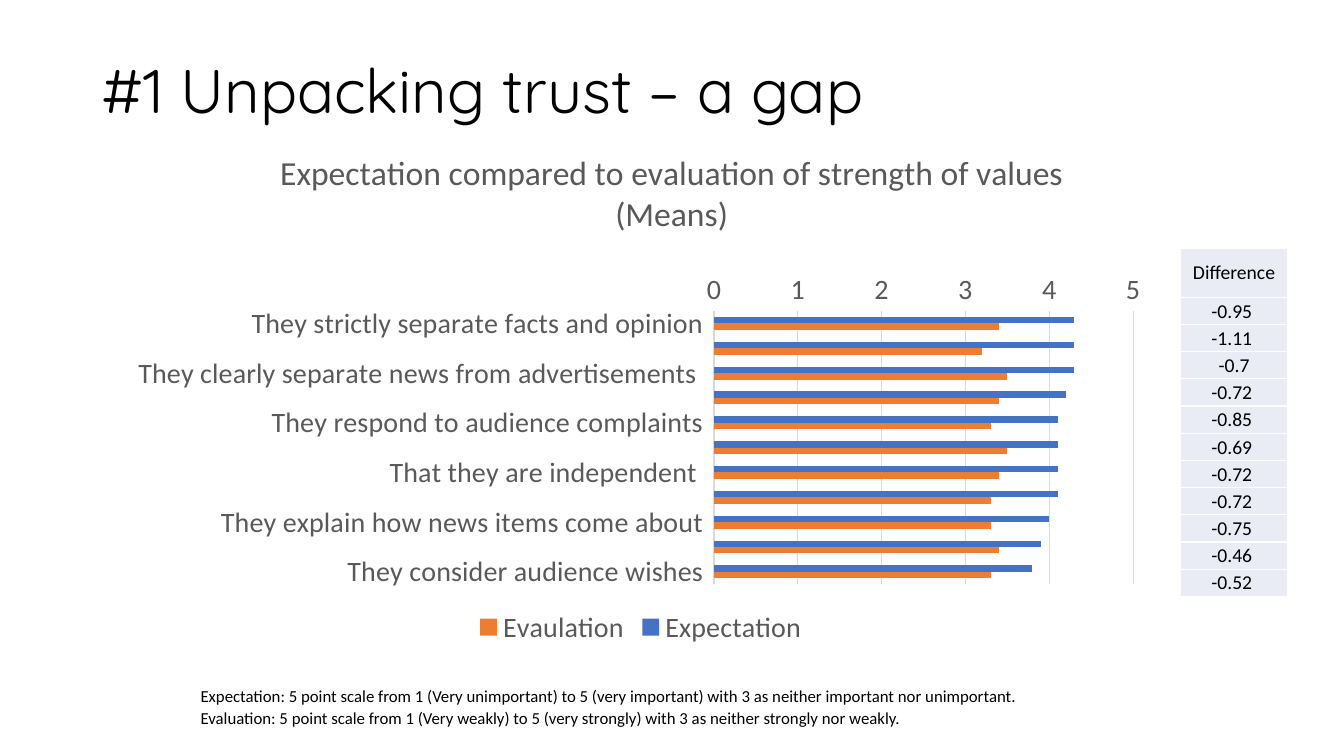
"""Build a slide comparing expected and perceived values behind trust in news."""
from dataclasses import dataclass

from lxml.etree import SubElement
from pptx import Presentation
from pptx.chart.chart import Chart
from pptx.chart.data import CategoryChartData
from pptx.dml.color import RGBColor
from pptx.enum.chart import XL_CHART_TYPE as ChartType
from pptx.enum.chart import XL_LEGEND_POSITION as LegendPosition
from pptx.enum.chart import XL_TICK_MARK as TickMark
from pptx.enum.text import MSO_ANCHOR as Anchor
from pptx.enum.text import MSO_AUTO_SIZE as AutoSize
from pptx.enum.text import PP_ALIGN as Align
from pptx.oxml.ns import qn
from pptx.slide import Slide
from pptx.table import _Cell as Cell
from pptx.util import Inches, Pt

BLACK = RGBColor(0x00, 0x00, 0x00)
WHITE = RGBColor(0xFF, 0xFF, 0xFF)
GREY = RGBColor(0x59, 0x59, 0x59)
PALE_GREY = RGBColor(0xD9, 0xD9, 0xD9)
PALE_BLUE = RGBColor(0xE9, 0xEB, 0xF5)
BLUE = RGBColor(0x44, 0x72, 0xC4)
ORANGE = RGBColor(0xED, 0x7D, 0x31)
BODY_FONT = "Calibri"


@dataclass(frozen=True)
class Value:
    statement: str
    expectation: float
    evaluation: float
    difference: str


VALUES = [
    Value("They strictly separate facts and opinion ", 4.3, 3.4, "-0.95 "),
    Value("", 4.3, 3.2, "-1.11 "),
    Value("They clearly separate news from advertisements  ", 4.3, 3.5, "-0.7"),
    Value("", 4.2, 3.4, "-0.72 "),
    Value("They respond to audience complaints ", 4.1, 3.3, "-0.85 "),
    Value("", 4.1, 3.5, "-0.69 "),
    Value("That they are independent  ", 4.1, 3.4, "-0.72 "),
    Value("", 4.1, 3.3, "-0.72 "),
    Value("They explain how news items come about ", 4, 3.3, "-0.75 "),
    Value("", 3.9, 3.4, "-0.46 "),
    Value("They consider audience wishes ", 3.8, 3.3, "-0.52 "),
]
SCALE_NOTES = [
    "Expectation: 5 point scale from 1 (Very unimportant) to 5 (very important) "
    "with 3 as neither important nor unimportant.",
    "Evaluation: 5 point scale from 1 (Very weakly) to 5 (very strongly) "
    "with 3 as neither strongly nor weakly.",
]


def style_font(font, size: float, color: RGBColor, name: str = BODY_FONT) -> None:
    font.name, font.size, font.bold = name, Pt(size), False
    font.color.rgb = color


def set_layout(parent, **fractions: float) -> None:
    layout = parent.find(qn("c:layout"))
    if layout is None:
        layout = SubElement(parent, qn("c:layout"))
        parent.insert(0, layout)
    for child in list(layout):
        layout.remove(child)
    manual = SubElement(layout, qn("c:manualLayout"))
    if "w" in fractions:
        SubElement(manual, qn("c:layoutTarget"), val="inner")
    for side in ("xMode", "yMode"):
        SubElement(manual, qn(f"c:{side}"), val="edge")
    for side, fraction in fractions.items():
        SubElement(manual, qn(f"c:{side}"), val=str(fraction))


def add_heading(slide: Slide) -> None:
    heading = slide.shapes.title
    heading.left, heading.top = Inches(0.92), Inches(0.2)
    heading.width, heading.height = Inches(11.5), Inches(1.45)
    frame = heading.text_frame
    frame.text = "#1 Unpacking trust – a gap"
    frame.auto_size = AutoSize.NONE
    frame.vertical_anchor = Anchor.MIDDLE
    paragraph = frame.paragraphs[0]
    paragraph.alignment, paragraph.line_spacing = Align.LEFT, 0.9
    style_font(paragraph.font, 44, BLACK, "Quicksand")


def style_axes(chart: Chart) -> None:
    for axis in (chart.category_axis, chart.value_axis):
        axis.major_tick_mark = axis.minor_tick_mark = TickMark.NONE
        style_font(axis.tick_labels.font, 20, GREY)
    statements, scale = chart.category_axis, chart.value_axis
    statements.reverse_order = True
    scale.minimum_scale, scale.maximum_scale, scale.major_unit = 0, 5, 1
    scale.tick_labels.number_format = "0"
    scale.tick_labels.number_format_is_linked = False
    scale.format.line.fill.background()
    for line in (statements.format.line, scale.major_gridlines.format.line):
        line.color.rgb, line.width = PALE_GREY, Pt(0.75)


def add_means_chart(slide: Slide) -> None:
    means = CategoryChartData()
    means.categories = [value.statement for value in VALUES]
    means.add_series("Expectation", [value.expectation for value in VALUES])
    means.add_series("Evaulation", [value.evaluation for value in VALUES])
    chart = slide.shapes.add_chart(
        ChartType.BAR_CLUSTERED,
        Inches(1.16), Inches(1.43), Inches(10.39), Inches(5.02), means,
    ).chart
    style_font(chart.font, 20, BLACK)

    title = chart.chart_title
    title.text_frame.text = "Expectation compared to evaluation of strength of values (Means)"
    style_font(title.text_frame.paragraphs[0].font, 24, GREY)
    set_layout(title._element, x=0.15, y=0)

    bars = chart.plots[0]
    bars.gap_width, bars.overlap, bars.vary_by_categories = 182, 0, False
    for series, color in zip(bars.series, (BLUE, ORANGE)):
        series.format.fill.solid()
        series.format.fill.fore_color.rgb = color
    style_axes(chart)
    set_layout(chart._chartSpace.chart.plotArea, x=0.57, y=0.33, w=0.4, h=0.54)

    chart.has_legend = True
    chart.legend.position = LegendPosition.BOTTOM
    chart.legend.include_in_layout = False
    style_font(chart.legend.font, 20, GREY)


def fill_cell(cell: Cell, text: str) -> None:
    cell.text = text
    cell.vertical_anchor = Anchor.MIDDLE
    cell.margin_left = cell.margin_right = cell.margin_top = Inches(0.01)
    cell.margin_bottom = 0
    paragraph = cell.text_frame.paragraphs[0]
    paragraph.alignment = Align.CENTER
    style_font(paragraph.font, 14, BLACK)
    properties = cell._tc.get_or_add_tcPr()
    for side in ("lnL", "lnR", "lnT", "lnB"):
        border = SubElement(properties, qn(f"a:{side}"), w=str(Pt(1)))
        SubElement(SubElement(border, qn("a:solidFill")), qn("a:srgbClr"), val=str(WHITE))
    cell.fill.solid()
    cell.fill.fore_color.rgb = PALE_BLUE


def add_difference_table(slide: Slide) -> None:
    entries = ["Difference"] + [value.difference for value in VALUES]
    table = slide.shapes.add_table(
        len(entries), 1, Inches(11.71), Inches(2.46), Inches(1.06), Inches(3.47)
    ).table
    for index, entry in enumerate(entries):
        table.rows[index].height = Inches(0.27 if index else 0.49)
        fill_cell(table.cell(index, 0), entry)


def add_scale_notes(slide: Slide) -> None:
    notes = slide.shapes.add_textbox(Inches(1.89), Inches(6.74), Inches(10.79), Inches(0.52))
    frame = notes.text_frame
    frame.word_wrap = True
    frame.auto_size = AutoSize.SHAPE_TO_FIT_TEXT
    frame.text = "\n".join(SCALE_NOTES)
    for paragraph in frame.paragraphs:
        paragraph.line_spacing = 1.07
        style_font(paragraph.font, 12, BLACK)


def main() -> None:
    deck = Presentation()
    deck.slide_width, deck.slide_height = Inches(13.33), Inches(7.5)
    slide = deck.slides.add_slide(deck.slide_layouts[5])
    add_heading(slide)
    add_means_chart(slide)
    add_difference_table(slide)
    add_scale_notes(slide)
    deck.save("out.pptx")


if __name__ == "__main__":
    main()
